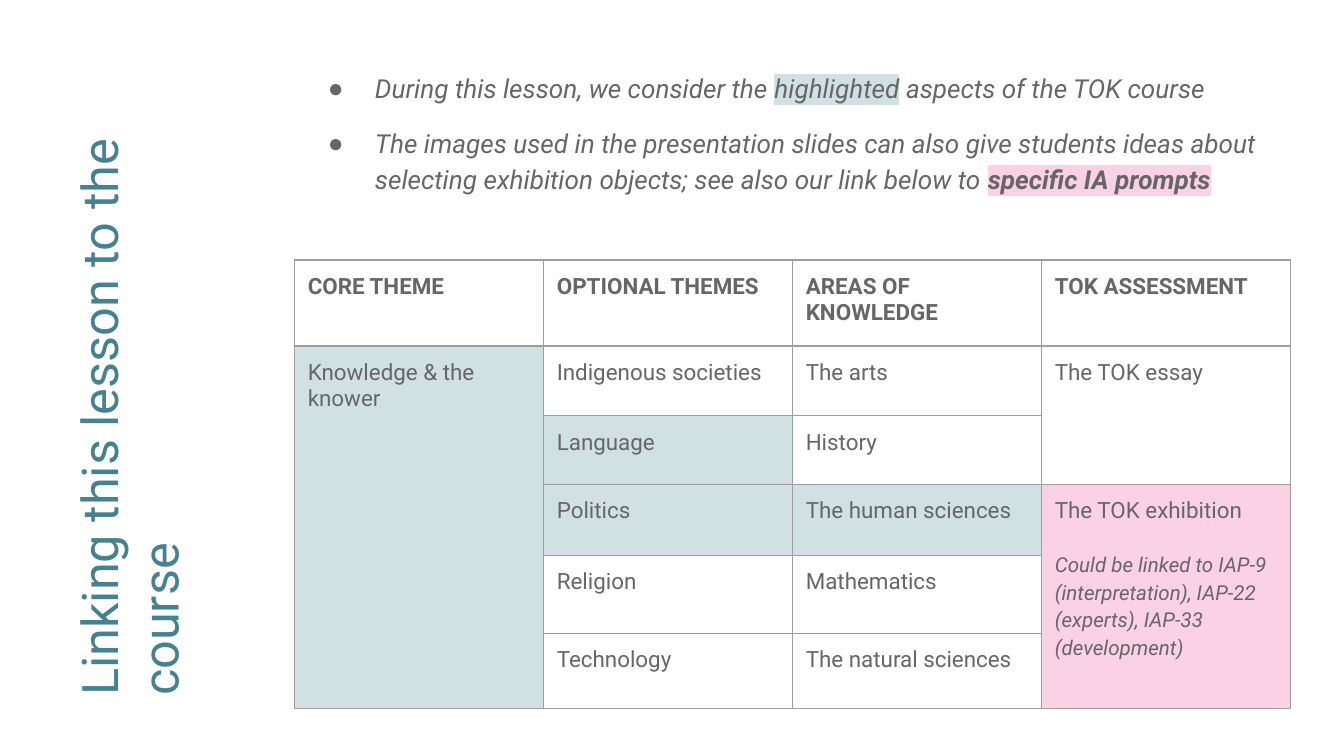
from dataclasses import dataclass
from typing import Optional

from lxml import etree
from pptx import Presentation
from pptx import util as u
from pptx.dml.color import RGBColor
from pptx.enum import text
from pptx.oxml import ns

TEAL = RGBColor(0x45, 0x81, 0x8E)
GREY = RGBColor(0x66, 0x66, 0x66)
BORDER = RGBColor(0x9E, 0x9E, 0x9E)
WHITE = RGBColor(0xFF, 0xFF, 0xFF)
BLUE = RGBColor(0xD0, 0xE0, 0xE3)
PINK = RGBColor(0xFB, 0xD1, 0xE6)
FONT = "Roboto"
W = u.Inches(10)
H = W * 9 // 16
LEFT = 0.219
COL = 0.1853
ROWS = [0.64, 0.52, 0.51, 0.53, 0.58, 0.56]


@dataclass
class Entry:
    row: int
    col: int
    label: str
    fill: RGBColor = WHITE
    rows: int = 1
    note: str = ""


ENTRIES = [
    *(Entry(0, c, label) for c, label in enumerate(
        ["CORE THEME", "OPTIONAL THEMES", "AREAS OF KNOWLEDGE", "TOK ASSESSMENT"])),
    Entry(1, 0, "Knowledge & the knower", BLUE, rows=5),
    Entry(1, 1, "Indigenous societies"),
    Entry(2, 1, "Language", BLUE),
    Entry(3, 1, "Politics", BLUE),
    Entry(4, 1, "Religion"),
    Entry(5, 1, "Technology"),
    Entry(1, 2, "The arts"),
    Entry(2, 2, "History"),
    Entry(3, 2, "The human sciences", BLUE),
    Entry(4, 2, "Mathematics"),
    Entry(5, 2, "The natural sciences"),
    Entry(1, 3, "The TOK essay", rows=2),
    Entry(3, 3, "The TOK exhibition", PINK, rows=3,
          note="Could be linked to IAP-9 (interpretation), IAP-22 (experts), "
               "IAP-33 (development)"),
]


def add_color(parent, tag: str, color: RGBColor):
    el = etree.SubElement(parent, ns.qn(tag))
    etree.SubElement(el, ns.qn("a:srgbClr"), val=str(color))
    return el


def add_text(p, content: str, *, size: float, color: RGBColor = GREY, bold: bool = False,
             italic: bool = False, highlight: Optional[RGBColor] = None) -> None:
    r = p.add_run()
    r.text = content
    f = r.font
    f.size, f.bold, f.italic, f.name = u.Pt(size), bold, italic, FONT
    f.color.rgb = color
    if highlight is not None:
        rPr = r._r.get_or_add_rPr()
        rPr.find(ns.qn("a:latin")).addprevious(add_color(rPr, "a:highlight", highlight))


def place(sp, x: float, y: float, w: float, h: float):
    sp.left, sp.top = int(W * x), int(H * y)
    sp.width, sp.height = int(W * w), int(H * h)
    tf = sp.text_frame
    tf.word_wrap = True
    tf.auto_size = text.MSO_AUTO_SIZE.NONE
    tf.vertical_anchor = text.MSO_ANCHOR.TOP
    tf.margin_left = tf.margin_right = tf.margin_top = tf.margin_bottom = u.Inches(0.1)
    return tf


def add_bullet(p) -> None:
    pPr = p._p.get_or_add_pPr()
    pPr.set("marL", str(u.Inches(0.5)))
    pPr.set("indent", str(u.Inches(-0.35)))
    add_color(pPr, "a:buClr", GREY)
    etree.SubElement(pPr, ns.qn("a:buChar"), char="●")
    p.line_spacing = 1.15


def add_borders(cell) -> None:
    tcPr = cell._tc.get_or_add_tcPr()
    for i, side in enumerate("LRTB"):
        ln = etree.Element(ns.qn(f"a:ln{side}"), w=str(u.Pt(0.75)))
        add_color(ln, "a:solidFill", BORDER)
        tcPr.insert(i, ln)


def fill_cell(tbl, e: Entry) -> None:
    cell = tbl.cell(e.row, e.col)
    if e.rows > 1:
        cell.merge(tbl.cell(e.row + e.rows - 1, e.col))
    cell.fill.solid()
    cell.fill.fore_color.rgb = e.fill
    cell.margin_left = cell.margin_right = u.Inches(0.1)
    cell.margin_top = cell.margin_bottom = u.Inches(0.1)
    tf = cell.text_frame
    add_text(tf.paragraphs[0], e.label, size=12, bold=e.row == 0)
    if e.note:
        p = tf.add_paragraph()
        p.space_before = u.Pt(14)
        p.line_spacing = 1.15
        add_text(p, e.note, size=11, italic=True)


def add_themes(s) -> None:
    gf = s.shapes.add_table(len(ROWS), 4, int(W * LEFT), int(H * 0.344),
                            int(W * COL * 4), u.Inches(sum(ROWS)))
    tbl = gf.table
    tbl.first_row = tbl.horz_banding = False
    for col in tbl.columns:
        col.width = int(W * COL)
    for row, height in zip(tbl.rows, ROWS):
        row.height = u.Inches(height)
    for e in ENTRIES:
        fill_cell(tbl, e)
    for cell in tbl.iter_cells():
        add_borders(cell)


def main() -> None:
    prs = Presentation()
    prs.slide_width, prs.slide_height = W, H
    s = prs.slides.add_slide(prs.slide_layouts[1])

    title = s.shapes.title
    p = place(title, -0.132, 0.379, 0.487, 0.253).paragraphs[0]
    title.rotation = 270
    p.alignment = text.PP_ALIGN.LEFT
    add_text(p, "Linking this lesson to the course", size=27, color=TEAL)

    tf = place(s.placeholders[1], LEFT, 0.072, 0.747, 0.217)
    p = tf.paragraphs[0]
    add_bullet(p)
    p.space_before = u.Pt(0)
    add_text(p, "During this lesson, we consider the ", size=14, italic=True)
    add_text(p, "highlighted", size=14, italic=True, highlight=BLUE)
    add_text(p, " aspects of the TOK course", size=14, italic=True)
    p = tf.add_paragraph()
    add_bullet(p)
    p.space_before = p.space_after = u.Pt(10)
    add_text(p, "The images used in the presentation slides can also give students ideas about "
                "selecting exhibition objects; see also our link below to ", size=14, italic=True)
    add_text(p, "specific IA prompts", size=14, bold=True, italic=True, highlight=PINK)

    add_themes(s)
    prs.save("out.pptx")


if __name__ == "__main__":
    main()
